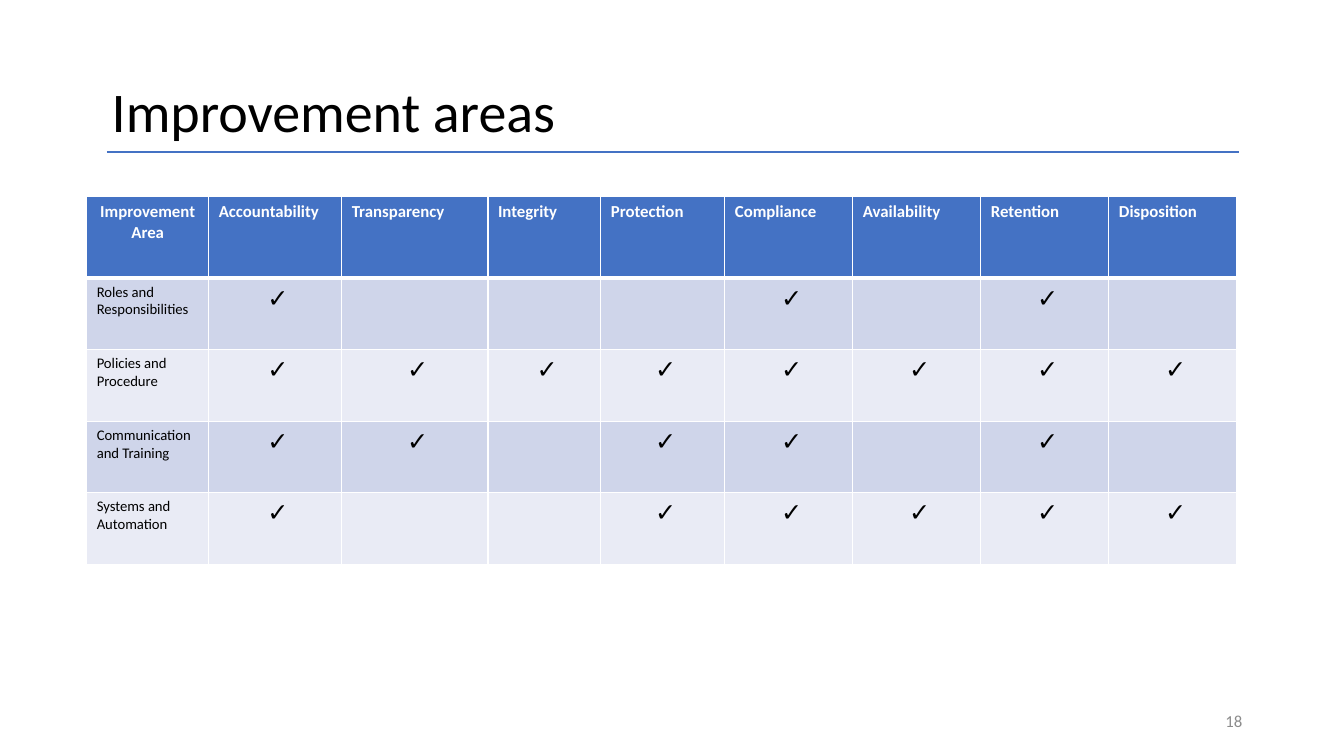
"""Build the slide that maps improvement areas to record-keeping principles."""
import pptx
import pptx.dml.color
import pptx.enum.shapes
import pptx.enum.text
import pptx.oxml
import pptx.oxml.ns
import pptx.util
from pptx.util import Inches

FONT = "Calibri"
BLUE, WHITE, BLACK, GREY = "4472C4", "FFFFFF", "000000", "8C8C8C"
BANDS = ("CFD5EA", "E9EBF5")
CHECK = " ✓"
ALIGN = pptx.enum.text.PP_ALIGN
ANCHOR = pptx.enum.text.MSO_ANCHOR
PRINCIPLES = ("Accountability", "Transparency", "Integrity", "Protection",
              "Compliance", "Availability", "Retention", "Disposition")
AREAS = {
    "Roles and Responsibilities": ("Accountability", "Compliance", "Retention"),
    "Policies and Procedure": PRINCIPLES,
    "Communication and Training": ("Accountability", "Transparency", "Protection",
                                   "Compliance", "Retention"),
    "Systems and Automation": ("Accountability", "Protection", "Compliance",
                               "Availability", "Retention", "Disposition"),
}
COLUMN_WIDTHS = (1.21, 1.32, 1.45, 1.12, 1.23, 1.27, 1.27, 1.27, 1.27)
HEADER_HEIGHT, ROW_HEIGHT = 0.81, 0.71


def colour(value):
    """Return the colour for a hex string."""
    return pptx.dml.color.RGBColor.from_string(value)


def write(frame, text, size, shade, align=ALIGN.LEFT, bold=False):
    """Put one formatted paragraph in a text frame."""
    para = frame.paragraphs[0]
    para.text = text
    para.alignment = align
    font = para.font
    font.name, font.size, font.bold = FONT, pptx.util.Pt(size), bold
    font.color.rgb = colour(shade)


def add_text(page, area, text, size, shade, align, anchor, wrap):
    """Add a text box that holds one paragraph."""
    box = page.shapes.add_textbox(*map(Inches, area))
    frame = box.text_frame
    frame.word_wrap = wrap
    frame.vertical_anchor = anchor
    write(frame, text, size, shade, align)


def add_rule(page, left, right, top):
    """Add the horizontal line below the title."""
    rule = page.shapes.add_connector(
        pptx.enum.shapes.MSO_CONNECTOR.STRAIGHT,
        Inches(left), Inches(top), Inches(right), Inches(top))
    rule.line.color.rgb = colour(BLUE)
    rule.line.width = pptx.util.Pt(1.5)
    rule._element.spPr.append(pptx.oxml.parse_xml(
        f"<a:effectLst {pptx.oxml.ns.nsdecls('a')}/>"))


def style_cell(cell, fill, top=1, bottom=1):
    """Give a cell white borders and a solid fill."""
    properties = cell._tc.get_or_add_tcPr()
    for side, points in (("L", 1), ("R", 1), ("T", top), ("B", bottom)):
        properties.append(pptx.oxml.parse_xml(
            f'<a:ln{side} {pptx.oxml.ns.nsdecls("a")} w="{pptx.util.Pt(points)}">'
            f'<a:solidFill><a:srgbClr val="{WHITE}"/></a:solidFill></a:ln{side}>'))
    cell.fill.solid()
    cell.fill.fore_color.rgb = colour(fill)


def add_matrix(page, left, top):
    """Add the table of areas against principles."""
    height = HEADER_HEIGHT + ROW_HEIGHT * len(AREAS)
    table = page.shapes.add_table(
        len(AREAS) + 1, len(COLUMN_WIDTHS), Inches(left), Inches(top),
        Inches(sum(COLUMN_WIDTHS)), Inches(height)).table
    for column, width in zip(table.columns, COLUMN_WIDTHS):
        column.width = Inches(width)
    for index, row in enumerate(table.rows):
        row.height = Inches(ROW_HEIGHT if index else HEADER_HEIGHT)

    for index, heading in enumerate(("Improvement Area", *PRINCIPLES)):
        cell = table.cell(0, index)
        style_cell(cell, BLUE, bottom=3)
        align = ALIGN.LEFT if index else ALIGN.CENTER
        write(cell.text_frame, heading, 12, WHITE, align, True)

    for index, (area, covered) in enumerate(AREAS.items(), 1):
        for cell in table.rows[index].cells:
            style_cell(cell, BANDS[(index - 1) % 2], top=3 if index == 1 else 1)
        write(table.cell(index, 0).text_frame, area, 10.5, BLACK)
        for principle in covered:
            cell = table.cell(index, PRINCIPLES.index(principle) + 1)
            write(cell.text_frame, CHECK, 18, BLACK, ALIGN.CENTER)


def main():
    """Build and save the deck."""
    deck = pptx.Presentation()
    deck.slide_width, deck.slide_height = Inches(13.33), Inches(7.5)
    page = deck.slides.add_slide(deck.slide_layouts[6])
    add_rule(page, 1.06, 12.29, 1.51)
    add_text(page, (9.42, 6.95, 3, 0.4), "18", 12, GREY,
             ALIGN.RIGHT, ANCHOR.MIDDLE, True)
    add_matrix(page, 0.86, 1.95)
    add_text(page, (1.01, 0.71, 4.64, 0.77), "Improvement areas", 40, BLACK,
             ALIGN.LEFT, ANCHOR.TOP, False)
    deck.save("out.pptx")


if __name__ == "__main__":
    main()
